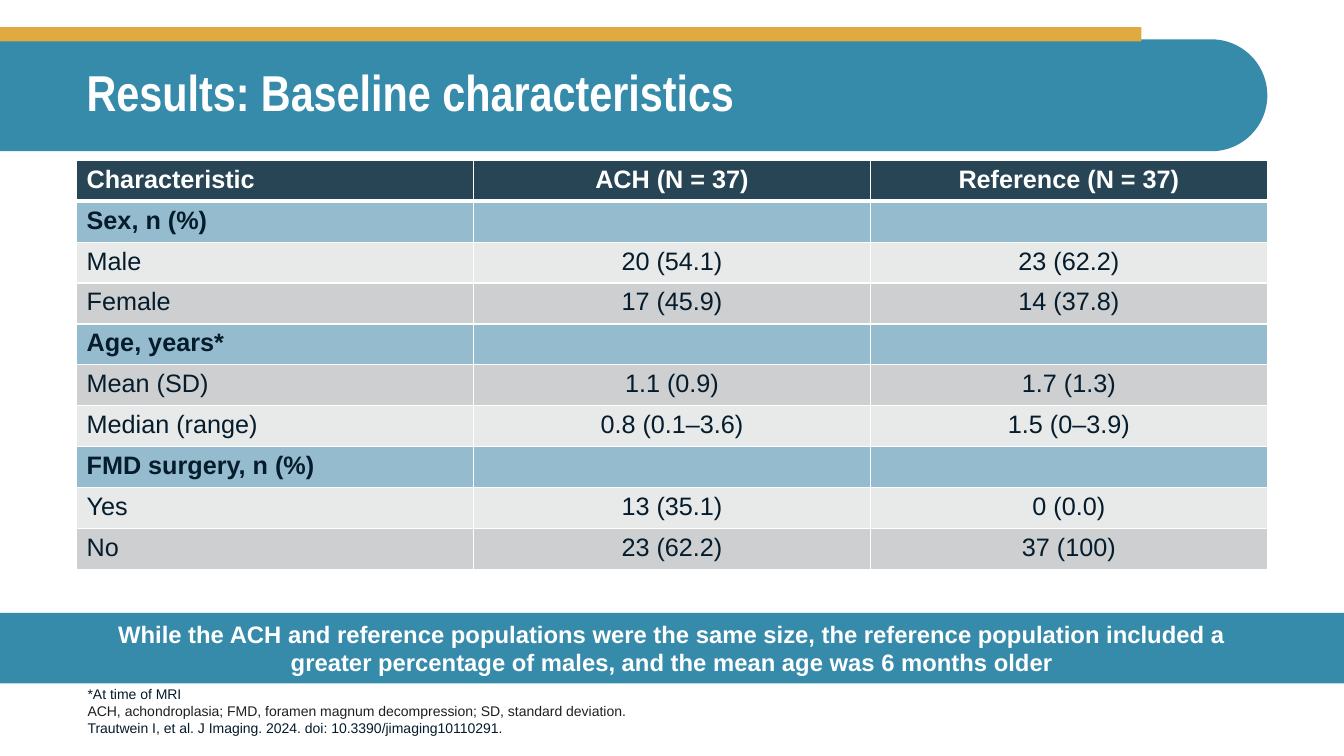
from lxml.etree import SubElement
from pptx import Presentation
from pptx.dml.color import RGBColor
from pptx.enum.shapes import MSO_SHAPE as Preset
from pptx.enum.text import MSO_ANCHOR as Anchor, PP_ALIGN as Align
from pptx.oxml.ns import qn
from pptx.util import Inches, Pt

COLOURS = {
    "teal": "368BAB", "gold": "DFAA40", "white": "FFFFFF", "header": "274554",
    "section": "95BBCE", "light": "E8E9E9", "grey": "CDCFD1",
    "ink": "051C2C", "note": "1F1F1F",
}

CHARACTERISTICS = [
    ("Characteristic", "ACH (N = 37)", "Reference (N = 37)"),
    ("Sex, n (%)", "", ""),
    ("Male", "20 (54.1)", "23 (62.2)"),
    ("Female", "17 (45.9)", "14 (37.8)"),
    ("Age, years*", "", ""),
    ("Mean (SD)", "1.1 (0.9)", "1.7 (1.3)"),
    ("Median (range)", "0.8 (0.1–3.6)", "1.5 (0–3.9)"),
    ("FMD surgery, n (%)", "", ""),
    ("Yes", "13 (35.1)", "0 (0.0)"),
    ("No", "23 (62.2)", "37 (100)"),
]


def colour(name):
    return RGBColor.from_string(COLOURS[name])


class SlideBuilder:
    """Draws styled elements on the current slide."""

    def __init__(self, slide, font="Arial"):
        self.slide = slide
        self.font = font

    def run(self, paragraph, words, size, tint, bold=False, font=None):
        run = paragraph.add_run()
        run.text = words
        run.font.name = font or self.font
        run.font.size = Pt(size)
        run.font.bold = bold
        run.font.color.rgb = colour(tint)

    def shape(self, preset, box, fill):
        shape = self.slide.shapes.add_shape(preset, *map(Inches, box))
        shape.shadow.inherit = False
        shape.fill.solid()
        shape.fill.fore_color.rgb = colour(fill)
        shape.line.fill.background()
        return shape

    def text(self, box, anchor):
        frame = self.slide.shapes.add_textbox(*map(Inches, box)).text_frame
        frame.word_wrap = True
        frame.vertical_anchor = anchor
        return frame.paragraphs[0]

    def borders(self, cell, top, bottom):
        properties = cell._tc.get_or_add_tcPr()
        for side, width in (("L", 1), ("R", 1), ("T", top), ("B", bottom)):
            line = SubElement(properties, qn(f"a:ln{side}"), w=str(Pt(width)))
            fill = SubElement(line, qn("a:solidFill"))
            SubElement(fill, qn("a:srgbClr"), val=COLOURS["white"])

    def table(self, rows, box, size):
        left, top, width, height = map(Inches, box)
        table = self.slide.shapes.add_table(
            len(rows), len(rows[0]), left, top, width, height).table
        for row_index, row in enumerate(rows):
            heading = row_index == 0
            section = not row[1]
            if heading:
                fill = "header"
            elif section:
                fill = "section"
            else:
                fill = "grey" if row_index % 2 else "light"
            for column, words in enumerate(row):
                cell = table.cell(row_index, column)
                self.borders(cell, 3 if row_index == 1 else 1, 3 if heading else 1)
                cell.fill.solid()
                cell.fill.fore_color.rgb = colour(fill)
                paragraph = cell.text_frame.paragraphs[0]
                paragraph.alignment = Align.CENTER if column else Align.LEFT
                if words:
                    self.run(paragraph, words, size, "white" if heading else "ink",
                             bold=heading or section)


def main():
    deck = Presentation()
    deck.slide_width, deck.slide_height = Inches(13.33), Inches(7.5)
    builder = SlideBuilder(deck.slides.add_slide(deck.slide_layouts[6]))

    banner = builder.shape(
        Preset.ROUND_2_SAME_RECTANGLE, (5.73, -5.34, 1.11, 12.57), "teal")
    banner.rotation = 270
    banner.adjustments[0], banner.adjustments[1] = 0, 0.5
    builder.shape(Preset.RECTANGLE, (0, 0.27, 11.32, 0.14), "gold")

    title = builder.text((0.76, 0.39, 11.81, 1.1), Anchor.MIDDLE)
    title.line_spacing = 0.9
    builder.run(title, "Results: Baseline characteristics", 36, "white",
                bold=True, font="Arial Narrow")

    builder.table(CHARACTERISTICS, (0.76, 1.59, 11.81, 4.06), 18)

    footnote = builder.text((0.77, 6.79, 9.88, 0.56), Anchor.BOTTOM)
    builder.run(footnote, "*At time of MRI", 10, "ink")
    footnote.add_line_break()
    builder.run(footnote, "ACH, achondroplasia; FMD, foramen magnum decompression; "
                "SD, standard deviation.", 10, "note")
    footnote.add_line_break()
    builder.run(footnote, "Trautwein I, et al. J Imaging. 2024. "
                "doi: 10.3390/jimaging10110291.", 10, "ink")

    takeaway = builder.shape(Preset.RECTANGLE, (0, 6.08, 13.33, 0.7), "teal").text_frame
    takeaway.word_wrap = True
    takeaway.vertical_anchor = Anchor.MIDDLE
    takeaway.margin_left = takeaway.margin_right = Inches(0.79)
    message = takeaway.paragraphs[0]
    message.alignment = Align.CENTER
    builder.run(message, "While the ACH and reference populations were the same size, "
                "the reference population included a greater percentage of males, "
                "and the mean age was 6 months older", 17, "white", bold=True)

    deck.save("out.pptx")


if __name__ == "__main__":
    main()
